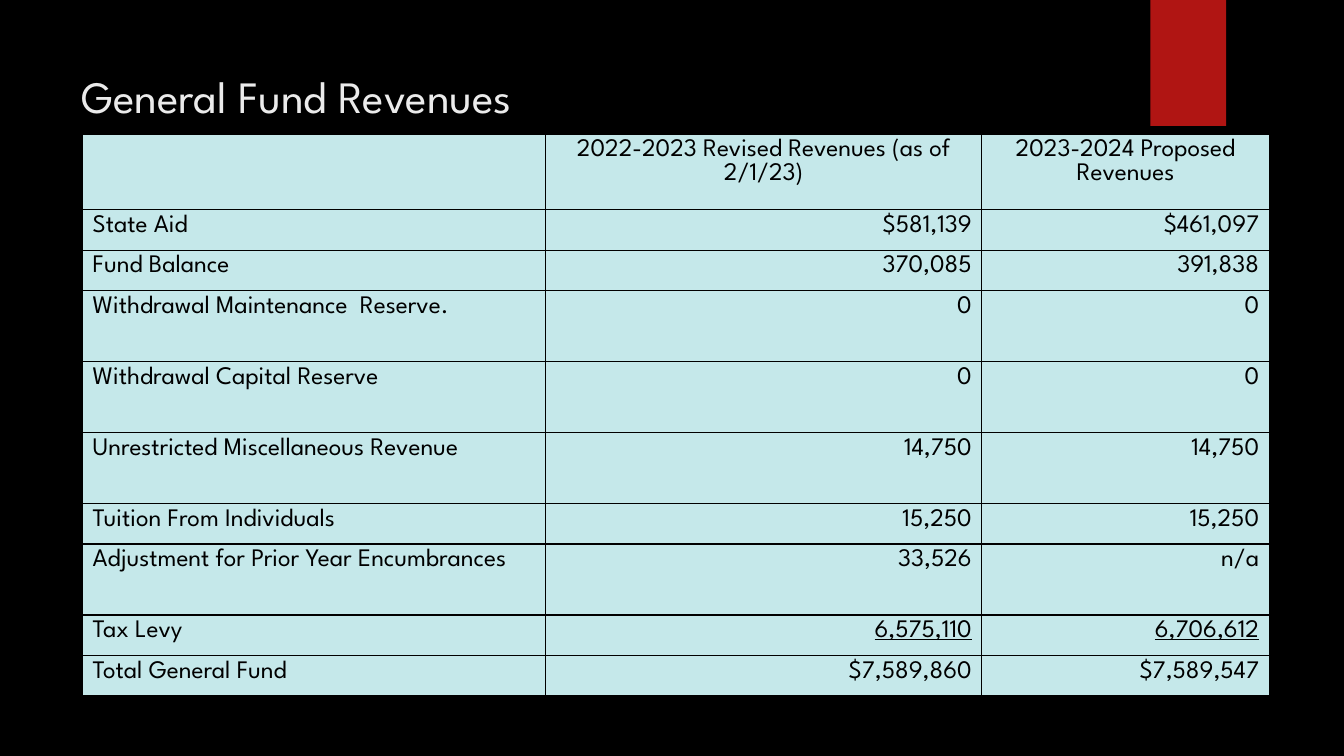
import pptx
import pptx.util
import pptx.dml.color
import pptx.enum.shapes
import pptx.enum.text
import pptx.oxml
import pptx.oxml.ns

FONT = "League Spartan"
ALIGN = pptx.enum.text.PP_ALIGN


def colour(hex_value):
    return pptx.dml.color.RGBColor.from_string(hex_value)


def percent(*shares):
    sides = (presentation.slide_width, presentation.slide_height) * 2
    return [round(side * share / 100) for side, share in zip(sides, shares)]


presentation = pptx.Presentation()
presentation.slide_width = pptx.util.Inches(13.33)
presentation.slide_height = pptx.util.Inches(7.5)
slide = presentation.slides.add_slide(presentation.slide_layouts[6])
slide.background.fill.solid()
slide.background.fill.fore_color.rgb = colour("000000")

ribbon = slide.shapes.add_shape(
    pptx.enum.shapes.MSO_SHAPE.RECTANGLE, *percent(85.6, 0, 5.63, 16.67))
ribbon.shadow.inherit = False
ribbon.fill.solid()
ribbon.fill.fore_color.rgb = colour("B01513")
ribbon.line.fill.background()

title = slide.shapes.add_textbox(*percent(5.33, 6.67, 77.2, 20.4))
title.text_frame.word_wrap = True
title.text_frame.margin_top = pptx.util.Inches(0.18)
title_paragraph = title.text_frame.paragraphs[0]
title_run = title_paragraph.add_run()
title_run.text = "General Fund Revenues"
title_format = {"name": FONT, "size": pptx.util.Pt(32)}
for attribute, value in title_format.items():
    setattr(title_run.font, attribute, value)
title_run.font.color.rgb = colour("EBEBEB")

revenues = [
    ("", "2022-2023 Revised Revenues (as of 2/1/23)", "2023-2024 Proposed Revenues"),
    ("State Aid", "$581,139", "$461,097"),
    ("Fund Balance", "370,085", "391,838"),
    ("Withdrawal Maintenance  Reserve.", "0", "0"),
    ("Withdrawal Capital Reserve", "0", "0"),
    ("Unrestricted Miscellaneous Revenue", "14,750", "14,750"),
    ("Tuition From Individuals", "15,250", "15,250"),
    ("Adjustment for Prior Year Encumbrances", "33,526", "n/a"),
    ("Tax Levy", "6,575,110", "6,706,612"),
    ("Total General Fund", "$7,589,860", "$7,589,547"),
]
HEADER, SHORT, TALL = 10, 5.22, 9.4
column_shares = [34.43, 32.48, 21.38]
row_shares = [HEADER, SHORT, SHORT, TALL, TALL, TALL, SHORT, TALL, SHORT, SHORT]

table_frame = slide.shapes.add_table(
    len(revenues), len(column_shares),
    *percent(6.15, 17.75, sum(column_shares), sum(row_shares)))
table = table_frame.table
table.first_row = False
table.horz_banding = False
for column, share in zip(table.columns, column_shares):
    column.width = percent(share)[0]
for row, share in zip(table.rows, row_shares):
    row.height = percent(0, share)[1]

for row_index, entries in enumerate(revenues):
    for column_index, entry in enumerate(entries):
        cell = table.cell(row_index, column_index)
        properties = cell._tc.get_or_add_tcPr()
        for side in ("lnL", "lnR", "lnT", "lnB"):
            properties.append(pptx.oxml.parse_xml(
                f'<a:{side} {pptx.oxml.ns.nsdecls("a")} w="12700"><a:solidFill>'
                f'<a:srgbClr val="000000"/></a:solidFill></a:{side}>'))
        cell.fill.solid()
        cell.fill.fore_color.rgb = colour("C5E8EA")
        paragraph = cell.text_frame.paragraphs[0]
        if row_index == 0:
            paragraph.alignment = ALIGN.CENTER
        else:
            paragraph.alignment = ALIGN.RIGHT if column_index else ALIGN.LEFT
        if not entry:
            continue
        run = paragraph.add_run()
        run.text = entry
        entry_format = {
            "name": FONT,
            "size": pptx.util.Pt(18),
            "bold": False,
            "underline": entries[0] == "Tax Levy" and column_index > 0,
        }
        for attribute, value in entry_format.items():
            setattr(run.font, attribute, value)
        run.font.color.rgb = colour("000000")

presentation.save("out.pptx")
